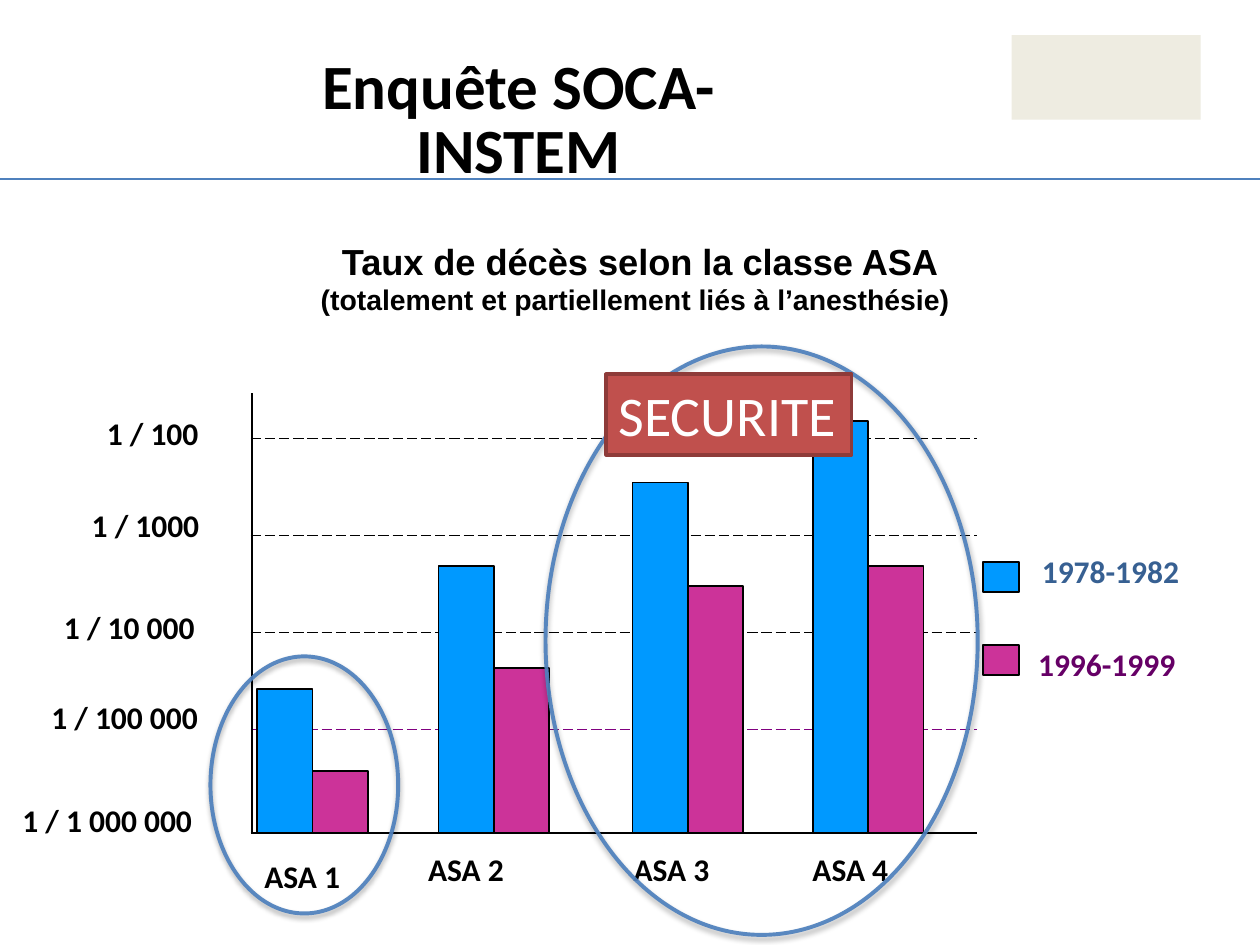
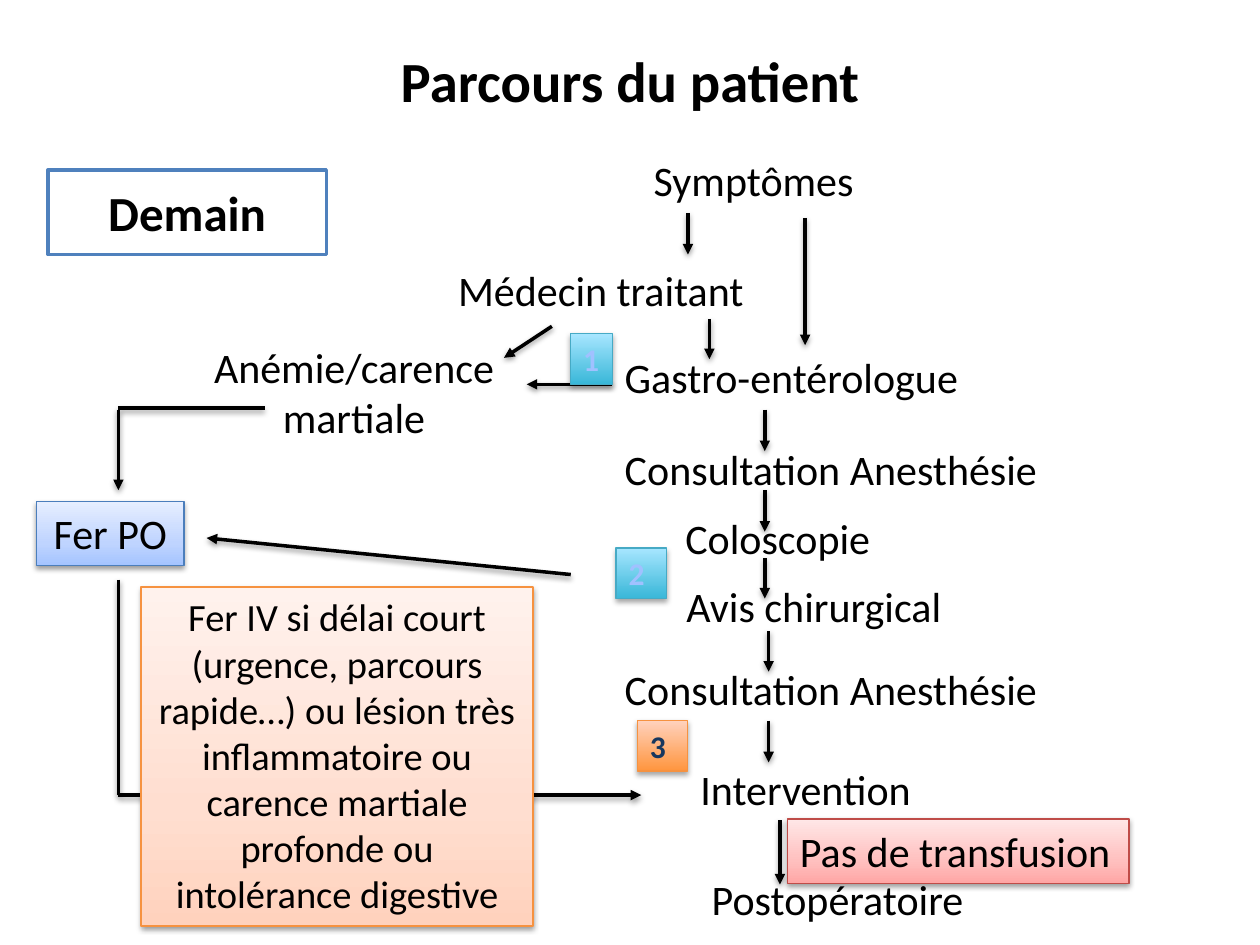
from lxml import etree
from pptx import Presentation
from pptx.dml.color import RGBColor
from pptx.enum.dml import MSO_LINE
from pptx.enum.shapes import MSO_CONNECTOR, MSO_SHAPE
from pptx.enum.text import MSO_ANCHOR, PP_ALIGN
from pptx.oxml.ns import qn
from pptx.util import Emu, Pt

# Shared look: 100 px to the inch
PX = 9144
FONT = "Calibri"
BLACK, WHITE, BLUE = "000000", "FFFFFF", "4F81BD"
EARLY, LATE = "0099FF", "CC3399"
LEFT, CENTER = PP_ALIGN.LEFT, PP_ALIGN.CENTER
TOP, MIDDLE = MSO_ANCHOR.TOP, MSO_ANCHOR.MIDDLE
SOFT, DEEP = (38, 1.6), (35, 1.8)  # shadow opacity in %, distance in pt

# Slide 1: death rates by ASA class
BANNER = "Enquête SOCA-INSTEM"
RATE_TITLE = [(" Taux de décès selon la classe ASA", 20.7),
              ("(totalement et partiellement liés à l’anesthésie)", 16.2)]
RATES = [("1 / 100", 75, 324), ("1 / 1000", 63, 397), ("1 / 10 000", 41, 478),
         ("1 / 100 000", 31, 549), ("1 / 1 000 000", 8, 631)]
GRID_COLORS = [BLACK, BLACK, BLACK, "800080"]
AXIS_LEFT, AXIS_RIGHT, AXIS_TOP, BASE = 199, 775, 312, 661
GRID_TOP, GRID_STEP, BAR_WIDTH = 348, 77, 44
# class name, label left, label top, bars left, tops of the two bars
CLASSES = [("ASA 1", 200, 675, 204, (547, 612)), ("ASA 2", 330, 670, 348, (449, 530)),
           ("ASA 3", 493, 670, 502, (383, 465)), ("ASA 4", 635, 670, 645, (334, 449))]
# period, text colour, key colour, key top, label position
PERIODS = [("1978-1982", "376092", EARLY, 446, (817, 433)),
           ("1996-1999", "660066", LATE, 512, (814, 507))]
RINGS = [(167, 521, 149, 204), (433, 275, 343, 467)]

# Slide 2: patient pathway
STEPS = [("Symptômes", (509, 118, 227, 50), LEFT),
         ("Médecin traitant", (344, 205, 266, 51), CENTER),
         ("Anémie/carence martiale", (148, 266, 266, 91), CENTER),
         ("Gastro-entérologue", (486, 274, 289, 51), LEFT),
         ("Consultation Anesthésie", (486, 347, 352, 51), LEFT),
         ("Coloscopie", (534, 402, 169, 51), LEFT),
         ("Avis chirurgical", (535, 456, 226, 51), LEFT),
         ("Consultation Anesthésie", (486, 522, 352, 51), LEFT),
         ("Intervention", (546, 601, 190, 51), LEFT),
         ("Postopératoire", (555, 688, 225, 51), LEFT)]
DOWN_ARROWS = [(546, 169, 202), (639, 173, 274), (563, 253, 285), (607, 325, 358),
               (607, 389, 422), (607, 443, 475), (610, 501, 533), (610, 572, 605),
               (619, 651, 702), (94, 325, 389)]
SIDE_ARROWS = [(486, 305, 418, 305), (438, 259, 400, 284), (94, 631, 509, 631),
               (453, 456, 164, 427)]
ELBOW_LINES = [(94, 460, 94, 631), (210, 324, 94, 324)]
RED = [(0, "FFA6A5"), (35, "FFC0BF"), (100, "FFE7E7")]
PALE_BLUE = [(0, "A4C4FF"), (35, "BFD4FF"), (100, "E6EEFF")]
PEACH = [(0, "FFD2BD"), (35, "FFDED0"), (100, "FFF2ED")]
AQUA = [(0, "39B7D8"), (100, "A7E6FF")]
ORANGE = [(0, "FF953E"), (100, "FFD2BD")]
IRON_IV = ["Fer IV si délai court",
           "(urgence, parcours rapide…) ou lésion très inflammatoire ou "
           "carence martiale profonde ou intolérance digestive"]
# paragraphs, place, gradient, line colour, text size, alignment
NOTES = [(["Pas de transfusion"], (625, 650, 271, 51), RED, "BF4C48", 24, LEFT),
         (["Fer PO"], (29, 398, 117, 51), PALE_BLUE, "4B7EBC", 24, CENTER),
         (IRON_IV, (112, 466, 311, 269), PEACH, "F69240", 22, CENTER)]
# number, place, gradient, line colour, text colour
MARKERS = [("1", (453, 265, 33, 40), AQUA, "46AAC5", "A0C1FF"),
           ("2", (489, 435, 40, 40), AQUA, "46AAC5", "A0C1FF"),
           ("3", (506, 572, 40, 40), ORANGE, "F69240", "17375E")]


def px(*values):
    return [Emu(value * PX) for value in values]


def rgb(code):
    return RGBColor.from_string(code)


def child(parent, tag, **attributes):
    return etree.SubElement(parent, qn(tag), {k: str(v) for k, v in attributes.items()})


def colour_node(parent, code, alpha=None):
    node = child(parent, "a:srgbClr", val=code)
    if alpha:
        child(node, "a:alpha", val=alpha * 1000)


def add_shadow(effects, opacity, distance):
    shadow = child(effects, "a:outerShdw", blurRad=Pt(3.1), dist=Pt(distance),
                   dir=5400000, rotWithShape=0)
    colour_node(shadow, BLACK, opacity)


def add_span(para, text, size, color=BLACK, bold=False, font=FONT):
    span = para.add_run()
    span.text = text
    span.font.name, span.font.size, span.font.bold = font, Pt(size), bold
    span.font.color.rgb = rgb(color)


def write(box, paragraphs, size, color=BLACK, bold=False, align=LEFT, anchor=TOP):
    frame = box.text_frame
    frame.word_wrap, frame.vertical_anchor = True, anchor
    for index, text in enumerate(paragraphs):
        para = frame.add_paragraph() if index else frame.paragraphs[0]
        para.alignment = align
        add_span(para, text, size, color, bold)
    return frame


def add_label(page, text, place, size, **style):
    return write(page.shapes.add_textbox(*px(*place)), [text], size, **style)


def add_box(page, place, fill=None, line=None, width=1, shadow=None,
            kind=MSO_SHAPE.RECTANGLE):
    box = page.shapes.add_shape(kind, *px(*place))
    if isinstance(fill, list):
        box.fill.gradient()
        box.fill.gradient_angle = 90
        stops = box._element.spPr.xpath(".//a:gsLst")[0]
        stops.clear()
        for position, code in fill:
            colour_node(child(stops, "a:gs", pos=position * 1000), code)
    elif fill:
        box.fill.solid()
        box.fill.fore_color.rgb = rgb(fill)
    else:
        box.fill.background()
    if line:
        box.line.color.rgb, box.line.width = rgb(line), Pt(width)
    else:
        box.line.fill.background()
    box.shadow.inherit = False
    if shadow:
        add_shadow(box._element.spPr.find(qn("a:effectLst")), *shadow)
    return box


def add_line(page, ends, color=BLACK, width=2, dash=None, arrow=False, shadow=None):
    link = page.shapes.add_connector(MSO_CONNECTOR.STRAIGHT, *px(*ends))
    link.line.color.rgb, link.line.width = rgb(color), Pt(width)
    if dash:
        link.line.dash_style = dash
    if arrow:
        child(link.line._get_or_add_ln(), "a:tailEnd", type="triangle")
    effects = child(link._element.spPr, "a:effectLst")
    if shadow:
        add_shadow(effects, *shadow)


def add_page(deck, title_lines, place):
    page = deck.slides.add_slide(deck.slide_layouts[5])
    title = page.shapes.title
    title.left, title.top, title.width, title.height = px(*place)
    title.text_frame.word_wrap = True
    title.text_frame.vertical_anchor = MIDDLE
    para = title.text_frame.paragraphs[0]
    para.alignment = CENTER
    for index, (text, size, font) in enumerate(title_lines):
        if index:
            para.add_line_break()
        add_span(para, text, size, bold=True, font=font)
    return page


def build_rates(deck):
    page = add_page(deck, [(text, size, "Arial") for text, size in RATE_TITLE],
                    (8, 183, 992, 75))

    # Banner
    frame = add_label(page, BANNER, (169, 43, 485, 59), 36, bold=True, align=CENTER)
    frame.margin_left, frame.margin_right, frame.margin_top, frame.margin_bottom = px(7, 7, 3, 3)
    frame.paragraphs[0].line_spacing = 0.85
    add_line(page, (0, 142, 1000, 142), BLUE, 1)
    add_box(page, (803, 28, 150, 67), "EEECE1")

    # Grid and labels
    for row, color in enumerate(GRID_COLORS):
        y = GRID_TOP + row * GRID_STEP
        add_line(page, (AXIS_LEFT, y, AXIS_RIGHT, y), color, 0.75, MSO_LINE.LONG_DASH)
    for text, left, top in RATES:
        add_label(page, text, (left, top, 200, 40), 18, bold=True)

    # Bars and axes
    for name, left, top, start, bar_tops in CLASSES:
        add_label(page, name, (left, top, 150, 40), 18, bold=True)
        for column, (bar_top, color) in enumerate(zip(bar_tops, (EARLY, LATE))):
            place = (start + column * BAR_WIDTH, bar_top, BAR_WIDTH, BASE - bar_top)
            add_box(page, place, color, BLACK)
    add_line(page, (AXIS_LEFT, BASE, AXIS_RIGHT, BASE), width=1.25)
    add_line(page, (AXIS_LEFT + 1, AXIS_TOP, AXIS_LEFT + 1, BASE), width=1.25)

    # Key
    for text, color, fill, top, corner in PERIODS:
        add_box(page, (780, top, 29, 24), fill, BLACK)
        add_label(page, text, (*corner, 161, 40), 18, color=color, bold=True)

    # Highlights
    for place in RINGS:
        ring = add_box(page, place, None, BLUE, 2.25, DEEP, MSO_SHAPE.OVAL)
        child(ring._element.spPr.xpath("./a:ln//a:srgbClr")[0], "a:alpha", val=92000)
    safety = add_box(page, (481, 297, 195, 64), "C0504D", "8E3B39", 2)
    write(safety, ["SECURITE"], 32, WHITE)


def build_pathway(deck):
    page = add_page(deck, [("Parcours du patient", 32.4, FONT)], (50, 30, 900, 67))
    tomorrow = add_box(page, (38, 135, 221, 67), WHITE, BLUE, 2)
    write(tomorrow, ["Demain"], 28, bold=True, align=CENTER, anchor=MIDDLE)

    # Steps and links
    for text, place, align in STEPS:
        add_label(page, text, place, 24, align=align)
    arrows = [(x, top, x, bottom) for x, top, bottom in DOWN_ARROWS] + SIDE_ARROWS
    for ends in arrows:
        add_line(page, ends, arrow=True, shadow=SOFT)
    for ends in ELBOW_LINES:
        add_line(page, ends, shadow=SOFT)

    # Treatment notes and numbered markers
    for paragraphs, place, fill, line, size, align in NOTES:
        write(add_box(page, place, fill, line, 0.75, SOFT), paragraphs, size, align=align)
    for number, place, fill, line, color in MARKERS:
        write(add_box(page, place, fill, line, 0.75, DEEP), [number], 18, color, True)


def main():
    deck = Presentation()
    deck.slide_width, deck.slide_height = px(1000, 750)
    build_rates(deck)
    build_pathway(deck)
    deck.save("out.pptx")


if __name__ == "__main__":
    main()
